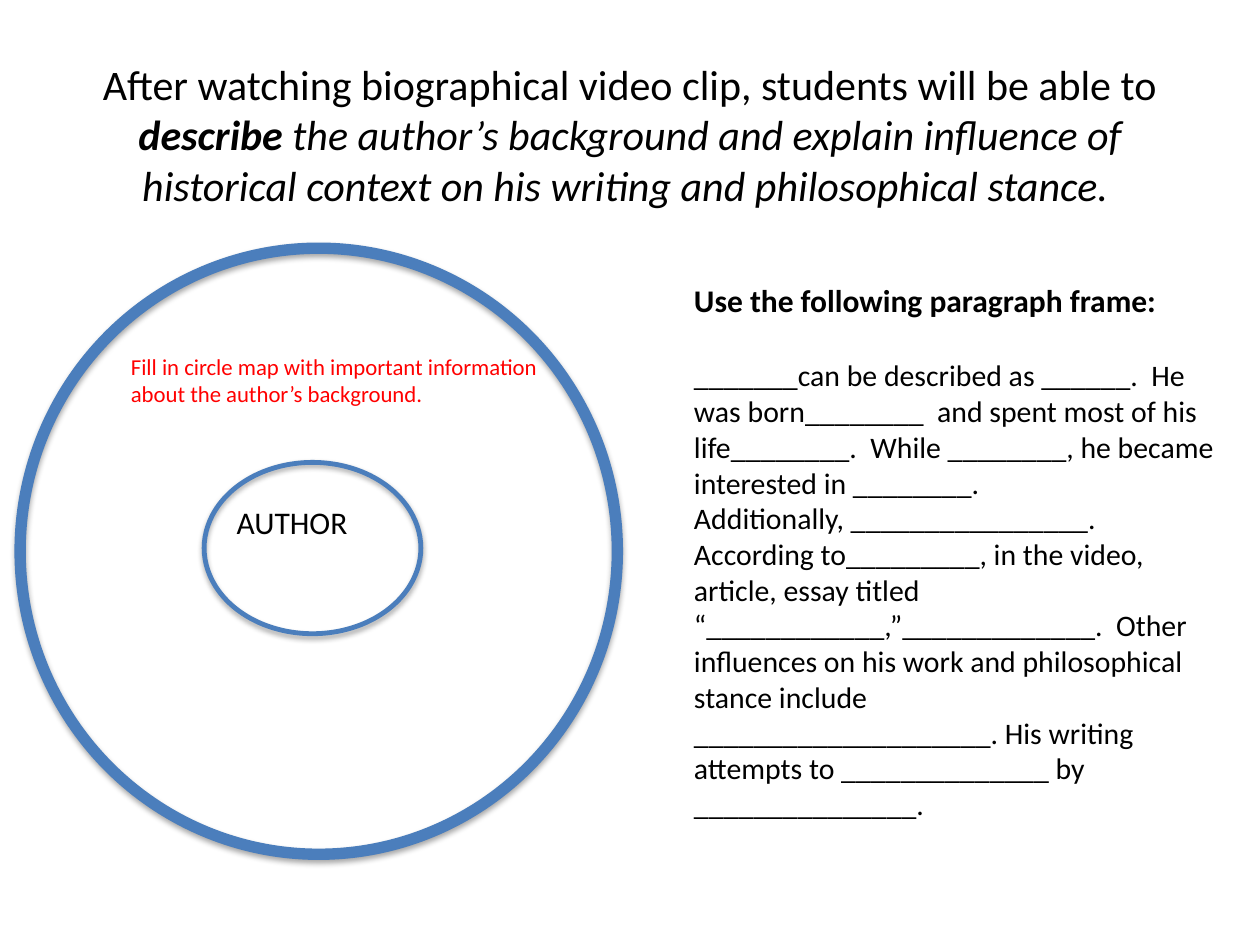
from dataclasses import dataclass

import pptx
import pptx.dml.color
import pptx.enum.shapes
import pptx.enum.text
import pptx.oxml
import pptx.oxml.ns
import pptx.util
from pptx.util import Inches

FONT = "Calibri"
BLACK, RED, BLUE = "000000", "FF0000", "4B7EBC"


@dataclass
class Run:
    text: str
    size: float
    color: str = BLACK
    bold: bool = False
    italic: bool = False


@dataclass
class Para:
    runs: list[Run]
    after: float = 0


@dataclass
class TextBox:
    box: tuple[float, float, float, float]
    paras: list[Para]
    centered: bool = False


@dataclass
class Ring:
    box: tuple[float, float, float, float]
    width: float


def rgb(color: str) -> pptx.dml.color.RGBColor:
    return pptx.dml.color.RGBColor.from_string(color)


def add_shadow(sp) -> None:
    """Soft black shadow falling straight down."""
    sp.shadow.inherit = False
    effects = sp._element.spPr.find(pptx.oxml.ns.qn("a:effectLst"))
    effects.append(pptx.oxml.parse_xml(
        f'<a:outerShdw {pptx.oxml.ns.nsdecls("a")} blurRad="{pptx.util.Pt(3.1)}" '
        f'dist="{pptx.util.Pt(1.8)}" dir="5400000" rotWithShape="0">'
        '<a:srgbClr val="000000"><a:alpha val="35000"/></a:srgbClr></a:outerShdw>'))


def draw_ring(s, ring: Ring) -> None:
    sp = s.shapes.add_shape(pptx.enum.shapes.MSO_SHAPE.OVAL, *map(Inches, ring.box))
    sp.fill.background()
    sp.line.color.rgb = rgb(BLUE)
    sp.line.width = pptx.util.Pt(ring.width)
    add_shadow(sp)


def draw_text(s, item: TextBox) -> None:
    tf = s.shapes.add_textbox(*map(Inches, item.box)).text_frame
    tf.word_wrap = True
    if item.centered:
        tf.vertical_anchor = pptx.enum.text.MSO_ANCHOR.MIDDLE
    for i, para in enumerate(item.paras):
        p = tf.add_paragraph() if i else tf.paragraphs[0]
        p.space_after = pptx.util.Pt(para.after)
        if item.centered:
            p.alignment = pptx.enum.text.PP_ALIGN.CENTER
        for run in para.runs:
            r = p.add_run()
            r.text = run.text
            r.font.name = FONT
            r.font.size = pptx.util.Pt(run.size)
            r.font.bold = run.bold
            r.font.italic = run.italic
            r.font.color.rgb = rgb(run.color)


TITLE = TextBox((0.5, 0.3, 9, 1.53), [Para([
    Run("After watching biographical video clip, students will be able to ", 24),
    Run("describe ", 24, bold=True, italic=True),
    Run("the author’s background and explain influence of historical context "
        "on his writing and philosophical stance. ", 24, italic=True),
])], centered=True)

RINGS = [Ring((0.16, 1.97, 4.74, 4.81), 6.5), Ring((1.62, 3.67, 1.72, 1.36), 2.75)]

HINT = TextBox((0.94, 2.75, 3.59, 0.54), [Para([
    Run("Fill in circle map with important information about the author’s background.",
        13, RED)])])

FRAME_LINES = [
    "_______can be described as ______.  He was born________  and spent most of his "
    "life________.  While ________, he became interested in ________.",
    "Additionally, ________________.  According to_________, in the video, article, "
    "essay titled “____________,”_____________.  Other influences on his work and "
    "philosophical stance include",
    "____________________. His writing attempts to ______________ by _______________.",
]
FRAME = TextBox((5.41, 2.18, 4.33, 4.43), [
    Para([Run("Use the following paragraph frame:", 18, bold=True)], after=22),
    *(Para([Run(line, 17)]) for line in FRAME_LINES),
])

AUTHOR = TextBox((1.78, 3.94, 1.38, 0.4), [Para([Run("AUTHOR", 18)])])


def main() -> None:
    prs = pptx.Presentation()
    prs.slide_width, prs.slide_height = Inches(10), Inches(7.5)
    s = prs.slides.add_slide(prs.slide_layouts[6])

    # Learning goal
    draw_text(s, TITLE)

    # Circle map
    for ring in RINGS:
        draw_ring(s, ring)

    # Hint, paragraph frame and centre label
    for item in (HINT, FRAME, AUTHOR):
        draw_text(s, item)

    prs.save("out.pptx")


if __name__ == "__main__":
    main()
